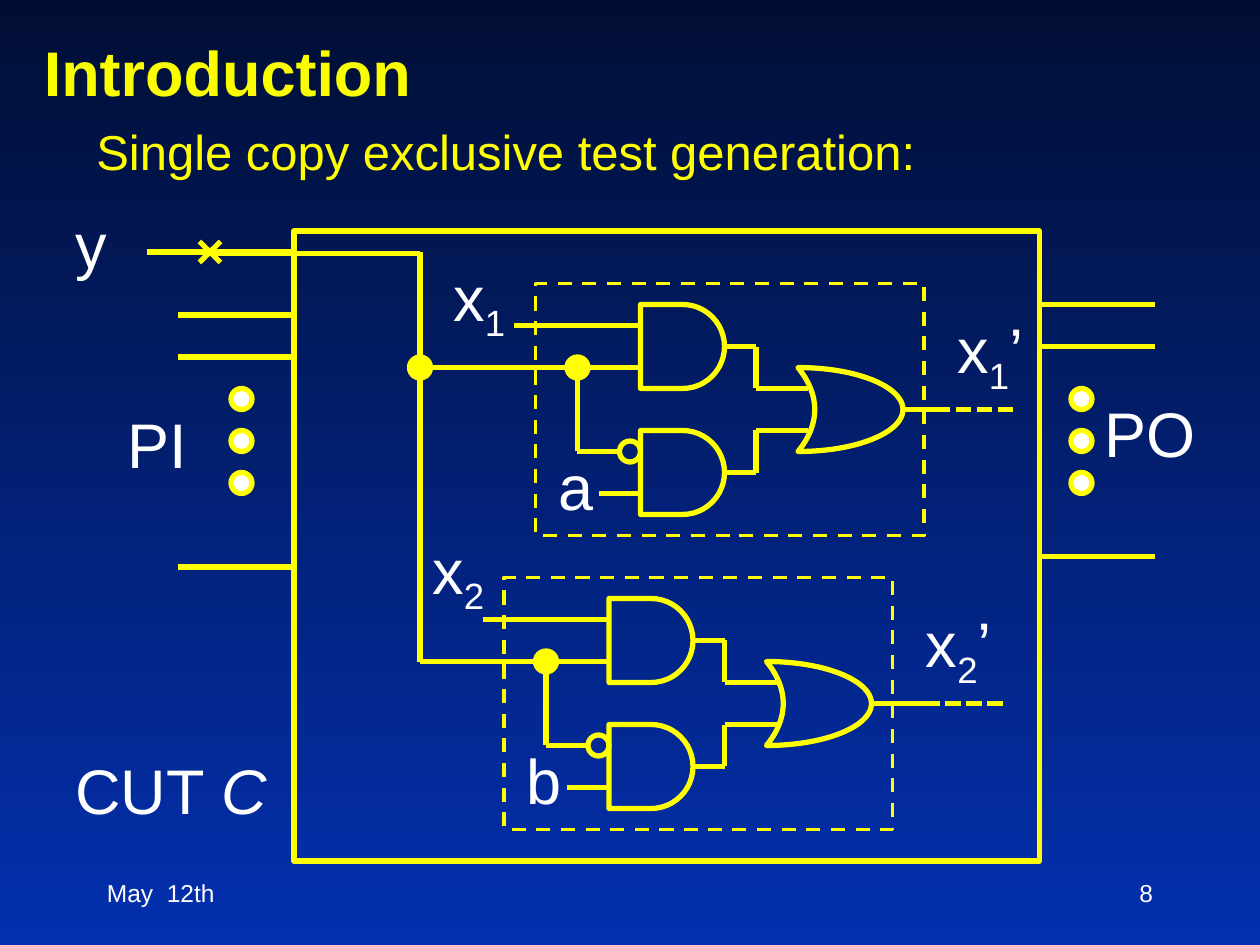
from dataclasses import dataclass
from itertools import pairwise

from lxml import etree
from pptx import Presentation
from pptx.dml.color import RGBColor
from pptx.enum.dml import MSO_LINE
from pptx.enum.shapes import MSO_CONNECTOR, MSO_SHAPE
from pptx.enum.text import MSO_ANCHOR, PP_ALIGN
from pptx.oxml.ns import qn
from pptx.util import Pt

STRAIGHT = MSO_CONNECTOR.STRAIGHT
RECTANGLE, ELLIPSE, MOON = MSO_SHAPE.RECTANGLE, MSO_SHAPE.OVAL, MSO_SHAPE.MOON
AND_GATE, NODE = MSO_SHAPE.FLOWCHART_DELAY, MSO_SHAPE.FLOWCHART_CONNECTOR
DASH, SHORT_DASH = MSO_LINE.DASH, MSO_LINE.SQUARE_DOT
TOP, MIDDLE, BOTTOM = MSO_ANCHOR.TOP, MSO_ANCHOR.MIDDLE, MSO_ANCHOR.BOTTOM
LEFT, RIGHT = PP_ALIGN.LEFT, PP_ALIGN.RIGHT
RIGHT_SIDE = 3

COLORS = {
    "title": "FAFD00",
    "line": "FFFF00",
    "text": "FFFFFF",
    "sky_top": "010E34",
    "sky_bottom": "0330AF",
}
CUT_LEFT, CUT_TOP, CUT_WIDTH, CUT_HEIGHT = 168, 132, 426, 360
CUT_RIGHT = CUT_LEFT + CUT_WIDTH
STUB = 66
TRUNK_X = 240
DOT = 12


@dataclass(frozen=True)
class Span:
    text: str
    baseline: int = 0
    italic: bool = False


@dataclass(frozen=True)
class Label:
    left: float
    top: float
    width: float
    spans: tuple[Span, ...]
    height: float = 51
    size: int = 36
    color: str = "text"
    bold: bool = False
    anchor: MSO_ANCHOR = TOP
    align: PP_ALIGN = LEFT


@dataclass(frozen=True)
class Copy:
    """One duplicated circuit, placed by the corner of its dashed frame."""
    left: float
    top: float
    index: str
    control: str
    input_label: tuple[float, float]
    output_length: float


@dataclass(frozen=True)
class Port:
    """A group of circuit terminals with an ellipsis of dots."""
    left: float
    wire_tops: tuple[float, ...]
    dots_left: float


COPIES = (
    Copy(306, 162, "1", "a", (252, 144), 18),
    Copy(288, 330, "2", "b", (240, 300), 30),
)
PORTS = (
    Port(CUT_LEFT - STUB, (180, 204, 324), 132),
    Port(CUT_RIGHT, (174, 198, 318), 612),
)
LABELS = (
    Label(18, 18, 684, (Span("Introduction"),), 48, 36, "title", True, BOTTOM),
    Label(48, 66, 488, (Span("Single copy exclusive test generation:"),), 41, 28, "line"),
    Label(54, 492, 150, (Span("May  12th"),), 36, 14, anchor=MIDDLE),
    Label(516, 492, 150, (Span("8"),), 36, 14, anchor=MIDDLE, align=RIGHT),
    Label(66, 228, 54, (Span("PI"),)),
    Label(624, 222, 78, (Span("PO"),)),
    Label(36, 114, 36, (Span("y"),)),
    Label(36, 426, 126, (Span("CUT "), Span("C", italic=True))),
)


def color(name: str) -> RGBColor:
    return RGBColor.from_string(COLORS[name])


def add_label(page, label: Label) -> None:
    box = page.shapes.add_textbox(
        Pt(label.left), Pt(label.top), Pt(label.width), Pt(label.height))
    frame = box.text_frame
    frame.word_wrap = True
    frame.vertical_anchor = label.anchor
    para = frame.paragraphs[0]
    para.alignment = label.align
    para.font.name = "Arial"
    para.font.size = Pt(label.size)
    para.font.bold = label.bold
    para.font.color.rgb = color(label.color)
    for span in label.spans:
        run = para.add_run()
        run.text = span.text
        if span.italic:
            run.font.italic = True
        if span.baseline:
            run._r.get_or_add_rPr().set("baseline", str(span.baseline * 1000))


def add_outline(page, kind, left, top, width, height, fill=None, weight=3, dash=None):
    shape = page.shapes.add_shape(kind, Pt(left), Pt(top), Pt(width), Pt(height))
    shape.shadow.inherit = False
    if fill:
        shape.fill.solid()
        shape.fill.fore_color.rgb = color(fill)
    else:
        shape.fill.background()
    shape.line.color.rgb = color("line")
    shape.line.width = Pt(weight)
    if dash:
        shape.line.dash_style = dash
    return shape


def add_wire(page, *points: tuple[float, float], source=None, dash=None) -> None:
    """Draw straight segments through the points, joined to the source's right side."""
    for number, (start, end) in enumerate(pairwise(points)):
        line = page.shapes.add_connector(STRAIGHT, *map(Pt, start + end))
        line.line.color.rgb = color("line")
        line.line.width = Pt(3)
        if dash:
            line.line.dash_style = dash
        etree.SubElement(line._element.spPr, qn("a:effectLst"))
        if source is not None and number == 0:
            line.begin_connect(source, RIGHT_SIDE)


def add_dot(page, x: float, y: float, fill: str) -> None:
    add_outline(page, NODE, x - DOT / 2, y - DOT / 2, DOT, DOT, fill)


def add_port(page, port: Port) -> None:
    for top in port.wire_tops:
        add_wire(page, (port.left, top), (port.left + STUB, top))
    for row in range(3):
        add_dot(page, port.dots_left + DOT / 2, 228 + 24 * row, "text")


def add_copy(page, copy: Copy) -> None:
    def at(x: float, y: float) -> tuple[float, float]:
        return copy.left + x, copy.top + y

    add_wire(page, (TRUNK_X, copy.top + 48), at(60, 48))
    add_wire(page, at(-12, 24), at(60, 24))
    add_wire(page, at(24, 48), at(24, 96), at(48, 96))
    add_wire(page, at(36, 120), at(60, 120))
    add_dot(page, *at(24, 48), "line")
    add_outline(page, ELLIPSE, *at(48, 90), DOT, DOT)
    for gate_top, or_input in ((12, 60), (84, 84)):
        gate = add_outline(page, AND_GATE, *at(60, gate_top), 48, 48)
        middle = gate_top + 24
        add_wire(page, at(108, middle), at(126, middle), at(126, or_input),
                 at(156, or_input), source=gate)
    or_gate = add_outline(page, MOON, *at(150, 48), 60, 48)
    or_gate.adjustments[0] = 0.84
    or_gate.rotation = 180
    output_end = 210 + copy.output_length
    add_wire(page, at(210, 72), at(output_end, 72))
    add_wire(page, at(output_end, 72), at(output_end + 48, 72), dash=SHORT_DASH)
    add_outline(page, RECTANGLE, *at(0, 0), 222, 144, weight=2, dash=DASH)

    name = (Span("x"), Span(copy.index, baseline=-25))
    add_label(page, Label(*copy.input_label, 54, name))
    add_label(page, Label(*at(234, 12), 72, name + (Span("’"),)))
    add_label(page, Label(*at(6, 90), 30, (Span(copy.control),)))


def main() -> None:
    deck = Presentation()
    deck.slide_width, deck.slide_height = Pt(720), Pt(540)
    page = deck.slides.add_slide(deck.slide_layouts[6])
    sky = page.background.fill
    sky.gradient()
    sky.gradient_angle = 270
    for stop, name in zip(sky.gradient_stops, ("sky_top", "sky_bottom")):
        stop.color.rgb = color(name)

    add_outline(page, RECTANGLE, CUT_LEFT, CUT_TOP, CUT_WIDTH, CUT_HEIGHT)
    for port in PORTS:
        add_port(page, port)
    add_wire(page, (84, 144), (CUT_LEFT, 144))
    add_wire(page, (120, 144.7), (TRUNK_X, 144.7))
    add_wire(page, (TRUNK_X, 378), (TRUNK_X, 144))
    add_wire(page, (114, 138), (126, 150))
    add_wire(page, (126, 138), (114, 150))
    for copy in COPIES:
        add_copy(page, copy)
    add_dot(page, TRUNK_X, COPIES[0].top + 48, "line")
    for label in LABELS:
        add_label(page, label)
    deck.save("out.pptx")


if __name__ == "__main__":
    main()
